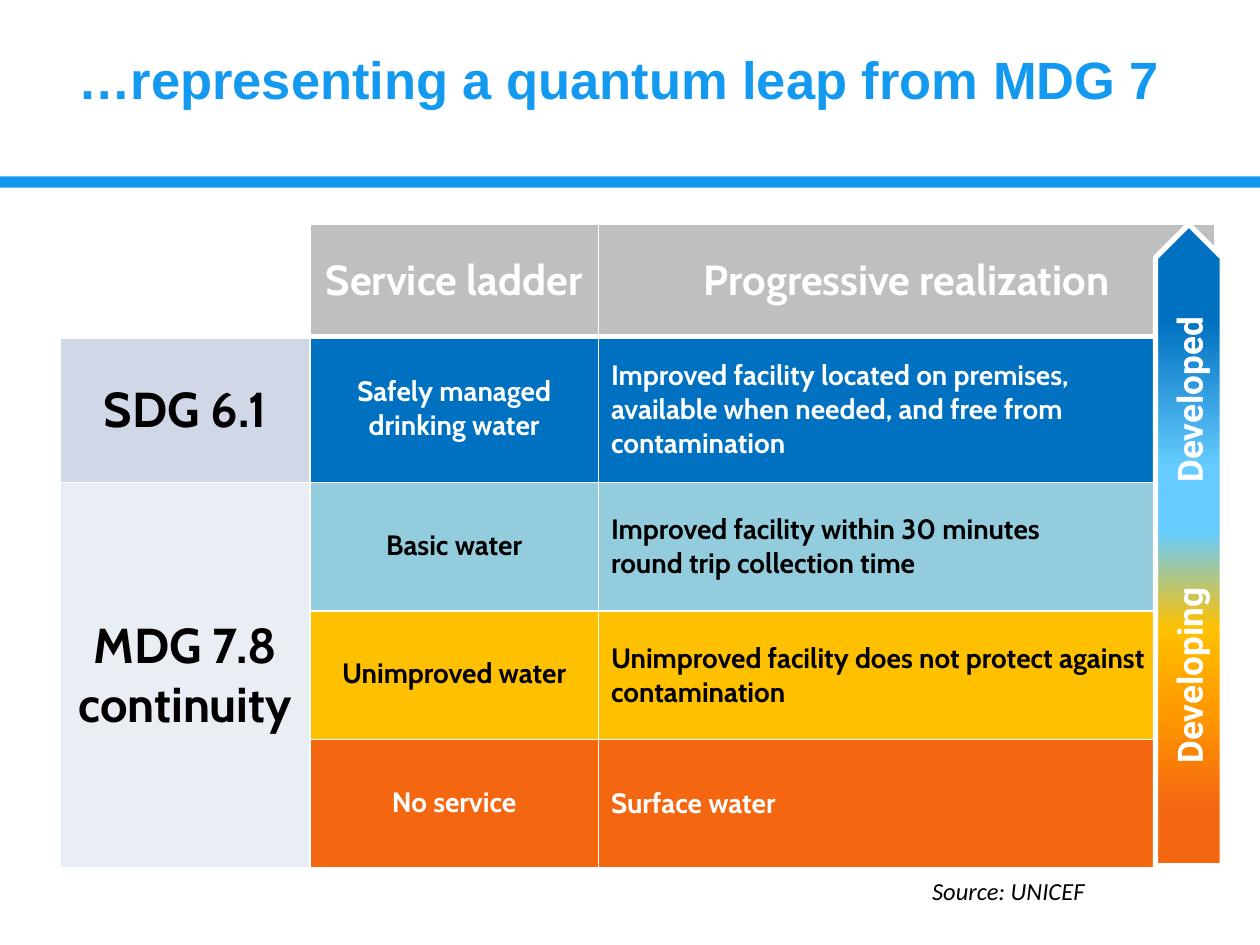
from copy import deepcopy

from pptx import Presentation
from pptx.dml.color import RGBColor
from pptx.enum.shapes import MSO_SHAPE as Shape
from pptx.enum.text import MSO_ANCHOR as Anchor, PP_ALIGN as Align
from pptx.oxml import parse_xml
from pptx.oxml.ns import nsdecls, qn
from pptx.util import Inches, Pt

BLUE = "139AF0"
WHITE = "FFFFFF"
BLACK = "000000"
HEADER_INSETS = (0.01, 0.01, 0.01, 0)
GOAL_INSETS = (0.07, 0.05, 0.07, 0.05)
SERVICE_INSETS = (0.12, 0, 0.12, 0.02)
DETAIL_INSETS = (0.1, 0.02, 0.44, 0.02)
COLUMNS = (1.98, 2.29, 4.89)
ROWS = (0.89, 1.16, 1.02, 1.02, 1.02)
HEADERS = ("Service ladder", "Progressive realization")
GOALS = ((1, "SDG 6.1", "D0D8E8"), (2, "MDG 7.8 continuity", "E9EDF4"))
LADDER = (
    ("Safely managed drinking water",
     "Improved facility located on premises, available when needed, and free from contamination",
     "0070C0", WHITE),
    ("Basic water", "Improved facility within 30 minutes \vround trip collection time",
     "93CDDD", BLACK),
    ("Unimproved water", "Unimproved facility does not protect against contamination",
     "FFC000", BLACK),
    ("No service", "Surface water", "F46710", WHITE),
)
STOPS = ((9, "F46710"), (24, "FF9900"), (37, "FFC000"),
         (52, "66CCFF"), (62, "66CCFF"), (85, "0070C0"))


def paint(fill, color):
    """Give a fill one solid colour."""
    fill.solid()
    fill.fore_color.rgb = RGBColor.from_string(color)


def write(frame, text, size, font, color, bold=False, italic=False, align=Align.LEFT):
    """Put one formatted paragraph in a text frame and return it."""
    frame.word_wrap = True
    para = frame.paragraphs[0]
    para.text = text
    para.alignment = align
    for span in para.runs:
        span.font.size = Pt(size)
        span.font.name = font
        span.font.bold = bold
        span.font.italic = italic
        span.font.color.rgb = RGBColor.from_string(color)
    return para


def add_borders(cell, bottom=1):
    """Draw white borders round a cell, with a chosen bottom width."""
    widths = {"lnL": 1, "lnR": 1, "lnT": 1, "lnB": bottom}
    properties = cell._tc.get_or_add_tcPr()
    for index, (side, width) in enumerate(widths.items()):
        border = parse_xml(
            f'<a:{side} {nsdecls("a")} w="{Pt(width)}"><a:solidFill>'
            f'<a:srgbClr val="{WHITE}"/></a:solidFill></a:{side}>')
        properties.insert(index, border)


def fill_cell(cell, text, color, insets, size, text_color, align=Align.CENTER):
    """Colour a table cell and write its text."""
    paint(cell.fill, color)
    cell.vertical_anchor = Anchor.MIDDLE
    (cell.margin_left, cell.margin_top,
     cell.margin_right, cell.margin_bottom) = map(Inches, insets)
    write(cell.text_frame, text, size, "Cabin", text_color, bold=True, align=align)


def add_ladder(page):
    """Add the table of service levels."""
    table = page.shapes.add_table(
        len(ROWS), len(COLUMNS), Inches(0.48), Inches(1.78),
        Inches(sum(COLUMNS)), Inches(sum(ROWS))).table
    for column, width in zip(table.columns, COLUMNS):
        column.width = Inches(width)
    for row, height in zip(table.rows, ROWS):
        row.height = Inches(height)
    paint(table.cell(0, 0).fill, WHITE)
    for column, text in enumerate(HEADERS, start=1):
        fill_cell(table.cell(0, column), text, "BFBFBF", HEADER_INSETS, 24, WHITE)
    table.cell(2, 0).merge(table.cell(4, 0))
    for row, text, color in GOALS:
        fill_cell(table.cell(row, 0), text, color, GOAL_INSETS, 28, BLACK)
    for row, (service, detail, color, text_color) in enumerate(LADDER, start=1):
        fill_cell(table.cell(row, 1), service, color, SERVICE_INSETS, 16, text_color)
        fill_cell(table.cell(row, 2), detail, color, DETAIL_INSETS, 16, text_color, Align.LEFT)
    for row in range(len(ROWS)):
        for column in range(len(COLUMNS)):
            add_borders(table.cell(row, column), bottom=1 if row else 3)


def set_gradient(fill, stops):
    """Give a fill a linear gradient with any number of stops."""
    fill.gradient()
    fill.gradient_angle = 0
    stop_list = fill._xPr.find(qn("a:gradFill")).find(qn("a:gsLst"))
    model = deepcopy(stop_list[0])
    for stop in list(stop_list):
        stop_list.remove(stop)
    for _ in stops:
        stop_list.append(deepcopy(model))
    for stop, (percent, color) in zip(fill.gradient_stops, stops):
        stop.position = percent / 100
        stop.color.rgb = RGBColor.from_string(color)


def add_progress_arrow(page):
    """Add the upward arrow from developing to developed."""
    arrow = page.shapes.add_shape(
        Shape.PENTAGON, Inches(6.89), Inches(4.06), Inches(5.09), Inches(0.53))
    arrow.rotation = 270
    arrow.shadow.inherit = False
    set_gradient(arrow.fill, STOPS)
    paint(arrow.line.fill, WHITE)
    arrow.line.width = Pt(3)
    frame = arrow.text_frame
    frame.margin_left = Inches(0.81)
    frame.margin_top = frame.margin_right = frame.margin_bottom = 0
    frame.vertical_anchor = Anchor.MIDDLE
    para = write(frame, "Developing\tDeveloped", 20, "Roboto", WHITE, bold=True)
    para.space_before = Pt(12)
    para._p.get_or_add_pPr().append(parse_xml(
        f'<a:tabLst {nsdecls("a")}><a:tab pos="{Inches(2.23)}" algn="l"/></a:tabLst>'))


def add_title(page):
    """Fill and place the title."""
    title = page.shapes.title
    title.left, title.top = Inches(0.13), Inches(0.08)
    title.width, title.height = Inches(9.57), Inches(1.08)
    paint(title.fill, WHITE)
    title.text_frame.vertical_anchor = Anchor.MIDDLE
    write(title.text_frame, "…representing a quantum leap from MDG 7", 30, "Arial", BLUE,
          bold=True, align=Align.CENTER)


def add_rule(page):
    """Add the blue band under the title."""
    rule = page.shapes.add_shape(Shape.RECTANGLE, 0, Inches(1.4), Inches(10), Inches(0.09))
    rule.shadow.inherit = False
    paint(rule.fill, BLUE)
    rule.line.fill.background()


def add_source(page):
    """Add the source line."""
    box = page.shapes.add_textbox(Inches(7.3), Inches(6.9), Inches(1.96), Inches(0.57))
    write(box.text_frame, "Source: UNICEF", 14, "Calibri", BLACK, italic=True)


def main():
    """Build and save the deck."""
    deck = Presentation()
    deck.slide_width, deck.slide_height = Inches(10), Inches(7.5)
    page = deck.slides.add_slide(deck.slide_layouts[5])
    add_title(page)
    add_rule(page)
    add_ladder(page)
    add_progress_arrow(page)
    add_source(page)
    deck.save("out.pptx")


if __name__ == "__main__":
    main()
